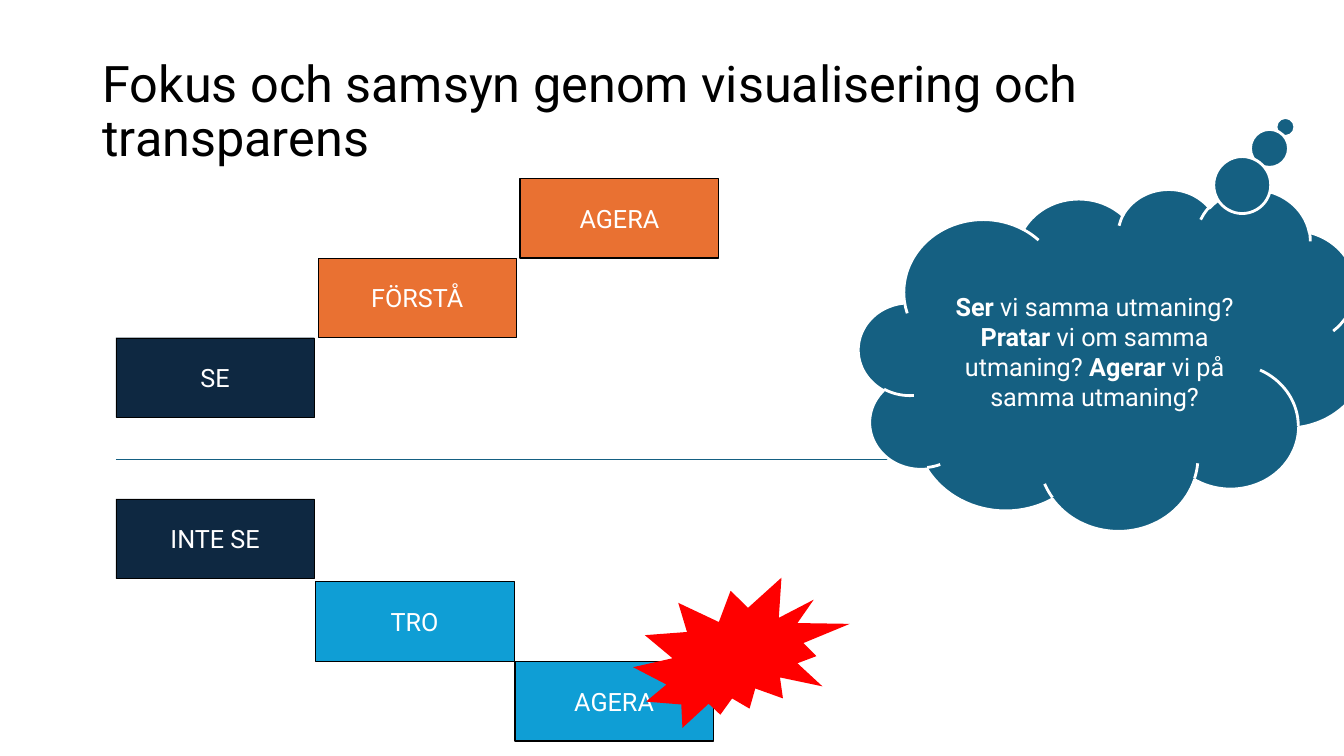
from lxml.etree import SubElement
from pptx import Presentation
from pptx.dml.color import RGBColor
from pptx.enum.shapes import MSO_CONNECTOR, MSO_SHAPE
from pptx.enum.text import MSO_ANCHOR, MSO_AUTO_SIZE, PP_ALIGN
from pptx.oxml.ns import qn
from pptx.util import Pt

FONT = "Roboto"
COLORS = {
    "black": "000000",
    "white": "FFFFFF",
    "navy": "0E2841",
    "orange": "E97132",
    "sky": "0F9ED5",
    "teal": "156082",
    "red": "FF0000",
}
STEP_WIDTH, STEP_HEIGHT = 141.8, 56.9
STAIRS_LEFT = 82.8

# Each stair: distance between left edges, then (label, top, fill, line width)
STAIRS = [
    (144.4, [("SE", 241.2, "navy", 0.25),
             ("FÖRSTÅ", 184.3, "orange", 0.25),
             ("AGERA", 127.4, "orange", 1)]),
    (142.5, [("INTE SE", 356.4, "navy", 0.25),
             ("TRO", 415.4, "sky", 0.25),
             ("AGERA", 472.3, "sky", 1)]),
]
QUESTIONS = [
    ("Ser", True), (" vi samma utmaning? ", False),
    ("Pratar", True), (" vi om samma utmaning? ", False),
    ("Agerar", True), (" vi på samma utmaning?", False),
]


def color(name):
    return RGBColor.from_string(COLORS[name])


def write_runs(shape, runs, size, font_color, align):
    frame = shape.text_frame
    frame.word_wrap = True
    frame.auto_size = MSO_AUTO_SIZE.NONE
    frame.vertical_anchor = MSO_ANCHOR.MIDDLE
    paragraph = frame.paragraphs[0]
    paragraph.alignment = align
    for text, bold in runs:
        run = paragraph.add_run()
        run.text = text
        run.font.name = FONT
        run.font.size = Pt(size)
        run.font.bold = bold
        run.font.color.rgb = color(font_color)
    return paragraph


def add_title(slide, text):
    title = slide.shapes.title
    title.left, title.top, title.width, title.height = map(Pt, (66, 28.8, 828, 104.4))
    paragraph = write_runs(title, [(text, False)], 36, "black", PP_ALIGN.LEFT)
    paragraph.line_spacing = 0.9


def add_figure(slide, kind, box, fill, line=None, line_width=0, runs=()):
    shape = slide.shapes.add_shape(kind, *map(Pt, box))
    shape.shadow.inherit = False
    shape.fill.solid()
    shape.fill.fore_color.rgb = color(fill)
    if line:
        shape.line.color.rgb = color(line)
        shape.line.width = Pt(line_width)
    else:
        shape.line.fill.background()
    if runs:
        write_runs(shape, runs, 18, "white", PP_ALIGN.CENTER)
    return shape


def add_divider(slide, left, right, top):
    divider = slide.shapes.add_connector(
        MSO_CONNECTOR.STRAIGHT, Pt(left), Pt(top), Pt(right), Pt(top))
    divider.line.color.rgb = color("teal")
    divider.line.width = Pt(1)
    SubElement(divider.element.spPr, qn("a:effectLst"))


def add_stair(slide, pitch, steps):
    for index, (label, top, fill, line_width) in enumerate(steps):
        box = (STAIRS_LEFT + index * pitch, top, STEP_WIDTH, STEP_HEIGHT)
        add_figure(slide, MSO_SHAPE.RECTANGLE, box, fill, "black", line_width,
                   [(label, False)])


def main():
    presentation = Presentation()
    presentation.slide_width, presentation.slide_height = Pt(960), Pt(540)
    slide = presentation.slides.add_slide(presentation.slide_layouts[5])

    add_title(slide, "Fokus och samsyn genom visualisering och transparens")

    # Rising and falling stairs on either side of the divider
    add_divider(slide, STAIRS_LEFT, 848.9, 328.3)
    for pitch, steps in STAIRS:
        add_stair(slide, pitch, steps)

    # Thought cloud with the questions
    cloud = add_figure(slide, MSO_SHAPE.CLOUD_CALLOUT, (613.4, 134.6, 362.9, 244.1),
                       "teal", "white", 2, QUESTIONS)
    cloud.adjustments[0] = 0.34
    cloud.adjustments[1] = -0.68

    # Collision at the foot of the falling stair
    add_figure(slide, MSO_SHAPE.EXPLOSION2, (452.2, 412.6, 154.8, 107.3), "red")

    presentation.save("out.pptx")


if __name__ == "__main__":
    main()
